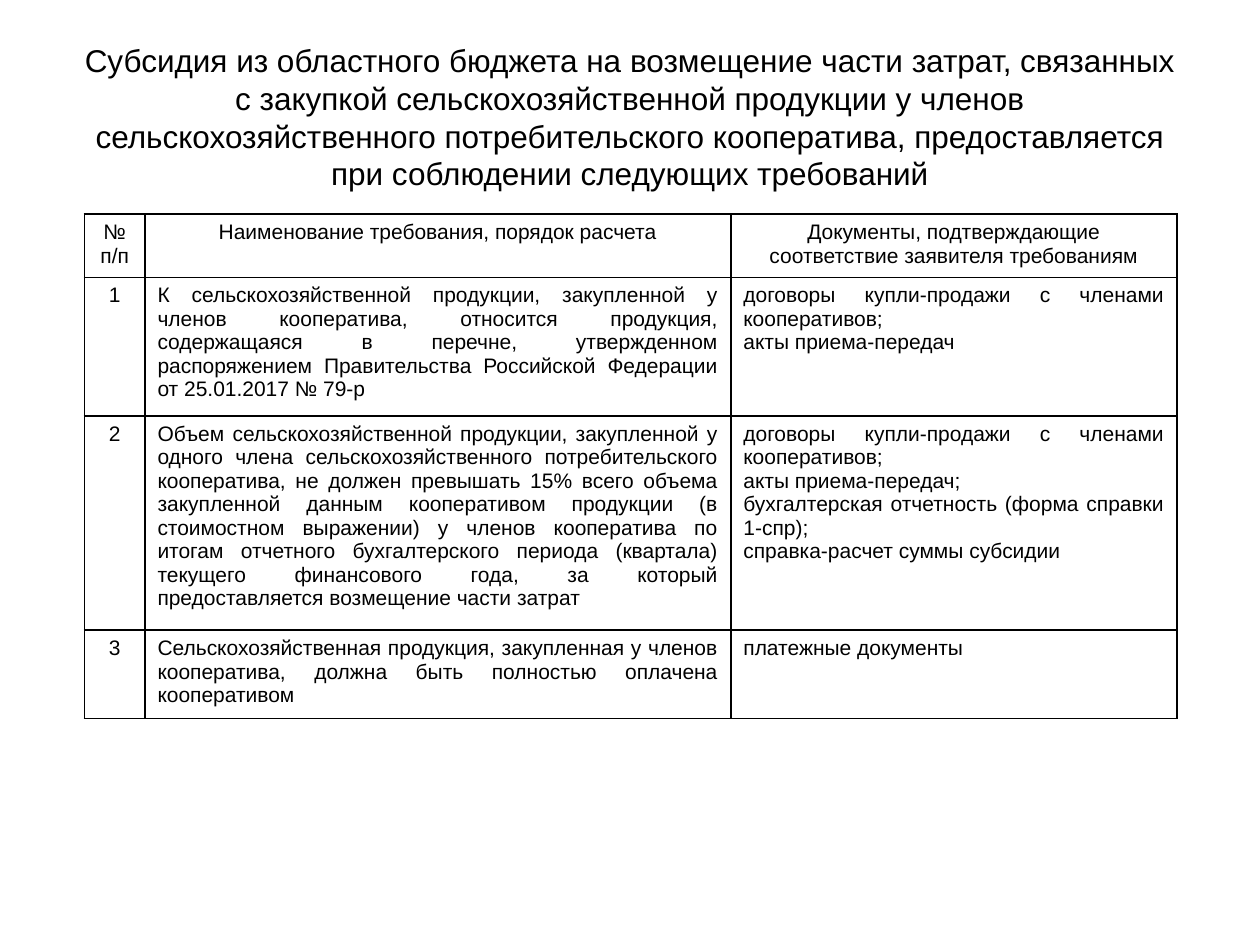
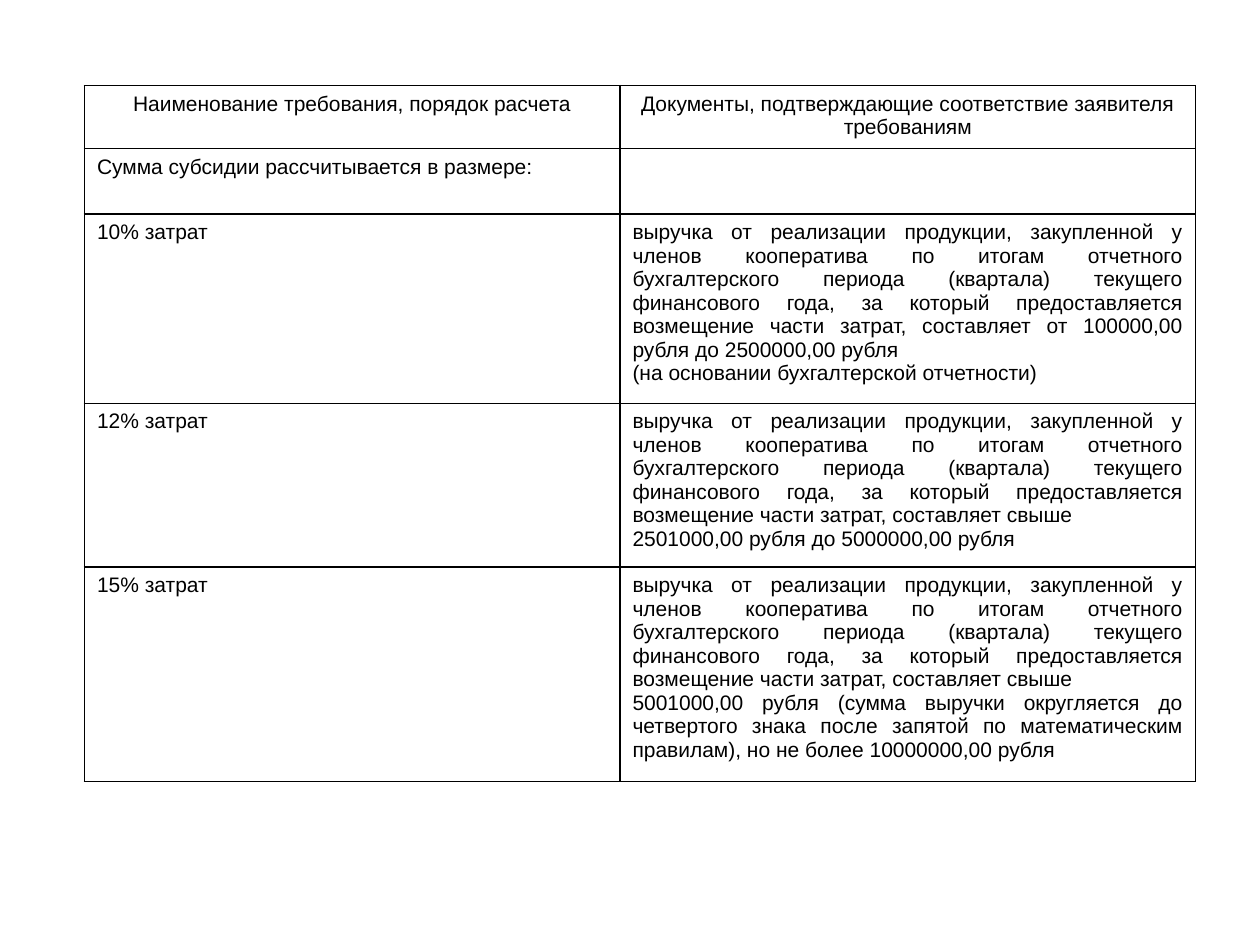
from dataclasses import dataclass

from lxml.etree import SubElement
from pptx import Presentation
from pptx.dml.color import RGBColor
from pptx.enum.text import MSO_ANCHOR as Anchor, PP_ALIGN as Align
from pptx.oxml.ns import qn
from pptx.util import Inches, Pt

# Shared style
BLACK = "000000"
FONT = "Arial"
LEFT = 0.67
BORDER_PT = 1

HEAD_REQUIREMENT = "Наименование требования, порядок расчета"
HEAD_DOCUMENTS = "Документы, подтверждающие соответствие заявителя требованиям"
CONTRACTS = "договоры купли-продажи с членами кооперативов;"
REVENUE = (
    "выручка от реализации продукции, закупленной у членов кооператива по итогам "
    "отчетного бухгалтерского периода (квартала) текущего финансового года, за который "
    "предоставляется возмещение части затрат, составляет "
)


@dataclass
class TableSpec:
    top: float
    cols: list[float]
    heights: list[float]
    rows: list[list[str]]  # a line break starts a new paragraph
    centered_cols: tuple[int, ...] = ()


TITLE = (
    "Субсидия из областного бюджета на возмещение части затрат, связанных с закупкой "
    "сельскохозяйственной продукции у членов сельскохозяйственного потребительского "
    "кооператива, предоставляется при соблюдении следующих требований"
)

REQUIREMENTS = TableSpec(
    top=1.7,
    cols=[0.48, 4.65, 3.54],
    heights=[0.48, 1.04, 1.59, 0.67],
    centered_cols=(0,),
    rows=[
        ["№\nп/п", HEAD_REQUIREMENT, HEAD_DOCUMENTS],
        ["1",
         "К сельскохозяйственной продукции, закупленной у членов кооператива, относится "
         "продукция, содержащаяся в перечне, утвержденном распоряжением Правительства "
         "Российской Федерации от 25.01.2017 № 79-р",
         f"{CONTRACTS}\nакты приема-передач"],
        ["2",
         "Объем сельскохозяйственной продукции, закупленной у одного члена "
         "сельскохозяйственного потребительского кооператива, не должен превышать 15% всего "
         "объема закупленной данным кооперативом продукции (в стоимостном выражении) у членов "
         "кооператива по итогам отчетного бухгалтерского периода (квартала) текущего "
         "финансового года, за который предоставляется возмещение части затрат",
         f"{CONTRACTS}\nакты приема-передач;\n"
         "бухгалтерская отчетность (форма справки 1-спр);\nсправка-расчет суммы субсидии"],
        ["3",
         "Сельскохозяйственная продукция, закупленная у членов кооператива, должна быть "
         "полностью оплачена кооперативом",
         "платежные документы"],
    ],
)

RATES = TableSpec(
    top=0.68,
    cols=[4.25, 4.57],
    heights=[0.48, 0.52, 1.41, 1.22, 1.6],
    rows=[
        [HEAD_REQUIREMENT, HEAD_DOCUMENTS],
        ["Сумма субсидии рассчитывается в размере:", ""],
        ["10% затрат",
         f"{REVENUE}от 100000,00 рубля до 2500000,00 рубля\n"
         "(на основании бухгалтерской отчетности)"],
        ["12% затрат",
         f"{REVENUE}свыше\n2501000,00 рубля до 5000000,00 рубля"],
        ["15% затрат",
         f"{REVENUE}свыше\n5001000,00 рубля (сумма выручки округляется до четвертого знака "
         "после запятой по математическим правилам), но не более 10000000,00 рубля"],
    ],
)


def rgb(color: str) -> RGBColor:
    return RGBColor.from_string(color)


def write(tf, text: str, *, size: float = 12, align=Align.JUSTIFY, color: str = BLACK) -> None:
    """Fill a text frame, one paragraph per line of text."""
    for i, line in enumerate(text.split("\n")):
        p = tf.paragraphs[0] if i == 0 else tf.add_paragraph()
        p.alignment = align
        if line:
            r = p.add_run()
            r.text = line
            r.font.name = FONT
            r.font.size = Pt(size)
            r.font.color.rgb = rgb(color)


def set_borders(cell, color: str = BLACK) -> None:
    # Borders come before the fill in the cell properties
    props = cell._tc.get_or_add_tcPr()
    for i, side in enumerate(("a:lnL", "a:lnR", "a:lnT", "a:lnB")):
        line = SubElement(props, qn(side), w=str(Pt(BORDER_PT)))
        fill = SubElement(line, qn("a:solidFill"))
        SubElement(fill, qn("a:srgbClr"), val=color)
        props.insert(i, line)


def add_title(slide, text: str) -> None:
    box = slide.shapes.add_textbox(Inches(0.5), Inches(0.3), Inches(9), Inches(1.25))
    tf = box.text_frame
    tf.word_wrap = True
    tf.vertical_anchor = Anchor.MIDDLE
    write(tf, text, size=18, align=Align.CENTER)


def add_grid(slide, spec: TableSpec) -> None:
    frame = slide.shapes.add_table(
        len(spec.rows), len(spec.cols), Inches(LEFT), Inches(spec.top),
        Inches(sum(spec.cols)), Inches(sum(spec.heights)))
    table = frame.table
    table.first_row = table.horz_banding = False
    for col, width in zip(table.columns, spec.cols):
        col.width = Inches(width)
    for row, height in zip(table.rows, spec.heights):
        row.height = Inches(height)
    for i, texts in enumerate(spec.rows):
        for j, text in enumerate(texts):
            cell = table.cell(i, j)
            cell.fill.background()
            set_borders(cell)
            centered = i == 0 or j in spec.centered_cols
            write(cell.text_frame, text, align=Align.CENTER if centered else Align.JUSTIFY)


def main() -> None:
    prs = Presentation()
    prs.slide_width, prs.slide_height = Inches(10), Inches(7.5)
    blank = prs.slide_layouts[6]

    # Slide 1: requirements
    slide = prs.slides.add_slide(blank)
    add_title(slide, TITLE)
    add_grid(slide, REQUIREMENTS)

    # Slide 2: subsidy rates
    add_grid(prs.slides.add_slide(blank), RATES)

    prs.save("out.pptx")


if __name__ == "__main__":
    main()
